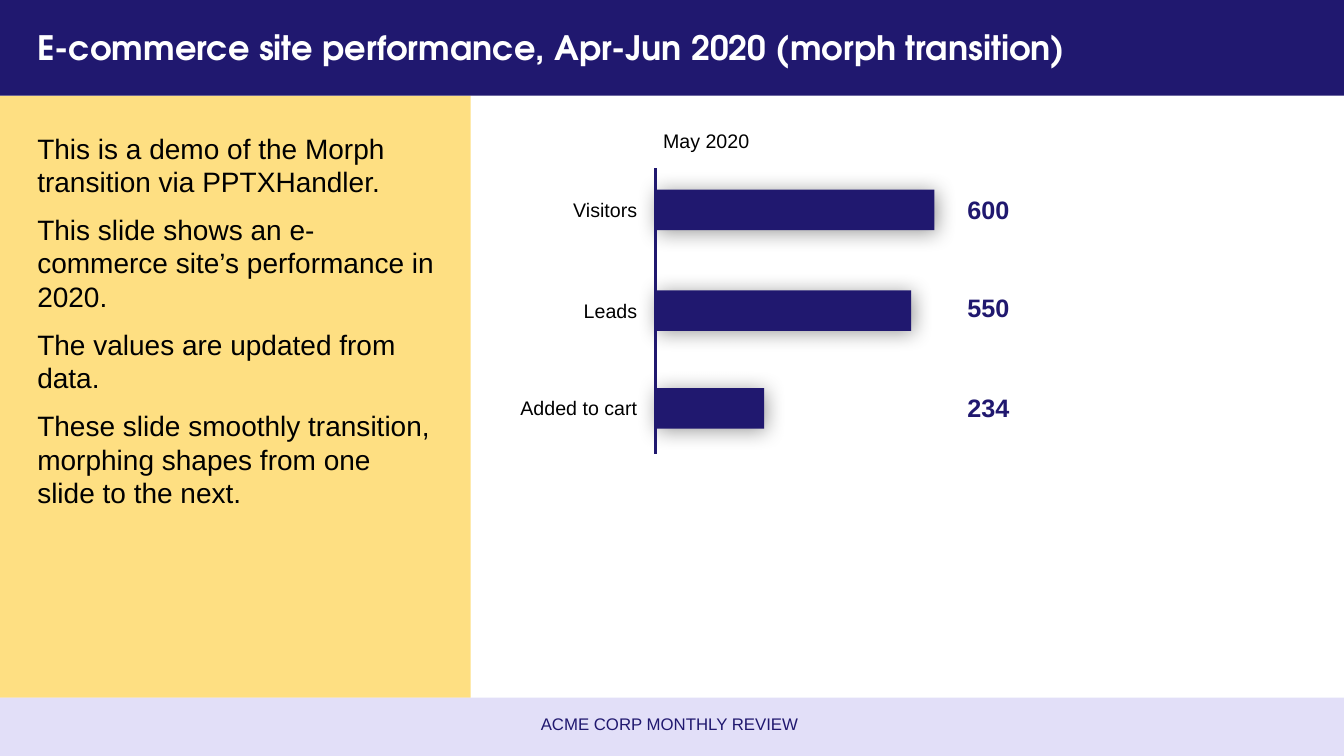
import pptx
import pptx.util
import pptx.dml.color
import pptx.enum.shapes
import pptx.enum.text
import pptx.oxml
import pptx.oxml.ns

Cm = pptx.util.Cm
Pt = pptx.util.Pt
ALIGN = pptx.enum.text.PP_ALIGN
ANCHOR = pptx.enum.text.MSO_ANCHOR
FIT = pptx.enum.text.MSO_AUTO_SIZE

TITLE = "E-commerce site performance, Apr-Jun 2020 (morph transition)"
NOTES = [
    "This is a demo of the Morph transition via PPTXHandler.",
    "This slide shows an e-commerce site’s performance in 2020.",
    "The values are updated from data.",
    "These slide smoothly transition, morphing shapes from one slide to the next.",
]
FOOTER = "ACME CORP MONTHLY REVIEW"
MONTH = "May 2020"
BARS = [
    ("Visitors", 600, 4.78, 4.78),
    ("Leads", 550, 7.32, 7.24),
    ("Added to cart", 234, 9.78, 9.75),
]
COLORS = {
    "navy": "20186F",
    "gold": "FEC107",
    "lilac": "C6C1F2",
    "white": "FFFFFF",
    "black": "000000",
}
WIDTH, HEIGHT = 33.87, 19.05
PANELS = [
    (0, 2.41, 11.86, 15.17, "gold", 50),
    (0, 17.58, WIDTH, HEIGHT - 17.58, "lilac", 50),
    (0, 0, WIDTH, 2.41, "navy", 100),
]
AXIS = 16.51
SCALE = 7.04 / 600
THICK = 1.02
SHADOW = (
    '<a:effectLst %s><a:outerShdw blurRad="%d" dist="%d" dir="2700000" '
    'algn="tl" rotWithShape="0"><a:srgbClr val="%s"><a:alpha val="40000"/>'
    "</a:srgbClr></a:outerShdw></a:effectLst>"
)


def tint(name):
    return pptx.dml.color.RGBColor.from_string(COLORS[name])


def add_rect(slide, left, top, width, height, color, alpha=100):
    kind = pptx.enum.shapes.MSO_SHAPE.RECTANGLE
    rect = slide.shapes.add_shape(kind, Cm(left), Cm(top), Cm(width), Cm(height))
    rect.shadow.inherit = False
    rect.line.fill.background()
    rect.fill.solid()
    rect.fill.fore_color.rgb = tint(color)
    if alpha < 100:
        tone = rect.fill._xPr.find(".//" + pptx.oxml.ns.qn("a:srgbClr"))
        mark = '<a:alpha %s val="%d"/>' % (pptx.oxml.ns.nsdecls("a"), alpha * 1000)
        tone.append(pptx.oxml.parse_xml(mark))
    return rect


def set_glow(shape):
    props = shape._element.spPr
    old = props.find(pptx.oxml.ns.qn("a:effectLst"))
    xml = SHADOW % (pptx.oxml.ns.nsdecls("a"), Pt(15), Pt(2), COLORS["black"])
    props.replace(old, pptx.oxml.parse_xml(xml))


def add_text(slide, left, top, width, height, lines, size, color="black",
             font="Arial", bold=False, align=ALIGN.LEFT, anchor=ANCHOR.TOP,
             gap=0, wrap=True, fit=FIT.NONE):
    box = slide.shapes.add_textbox(Cm(left), Cm(top), Cm(width), Cm(height))
    frame = box.text_frame
    frame.word_wrap = wrap
    frame.auto_size = fit
    frame.vertical_anchor = anchor
    for count, line in enumerate(lines):
        para = frame.add_paragraph() if count else frame.paragraphs[0]
        para.alignment = align
        para.space_before = Pt(gap)
        run = para.add_run()
        run.text = line
        run.font.name = font
        run.font.size = Pt(size)
        run.font.bold = bold
        run.font.color.rgb = tint(color)


def add_axis(slide):
    kind = pptx.enum.shapes.MSO_CONNECTOR.STRAIGHT
    axis = slide.shapes.add_connector(kind, Cm(AXIS), Cm(4.24), Cm(AXIS), Cm(11.43))
    axis.line.color.rgb = tint("navy")
    axis.line.width = Pt(2)
    blank = "<a:effectLst %s/>" % pptx.oxml.ns.nsdecls("a")
    axis._element.spPr.append(pptx.oxml.parse_xml(blank))


def main():
    """Build the monthly site performance slide."""
    deck = pptx.Presentation()
    deck.slide_width, deck.slide_height = Cm(WIDTH), Cm(HEIGHT)
    slide = deck.slides.add_slide(deck.slide_layouts[6])
    for panel in PANELS:
        add_rect(slide, *panel)
    add_text(slide, 0.69, 0.3, 32.51, 1.78, [TITLE], 24, "white",
             font="TeX Gyre Adventor", bold=True, anchor=ANCHOR.MIDDLE)
    add_text(slide, 0.69, 3.18, 10.54, 14.22, NOTES, 20, gap=10)
    add_text(slide, 5.18, 17.73, 23.39, 1.02, [FOOTER], 12, "navy",
             align=ALIGN.CENTER, anchor=ANCHOR.MIDDLE)
    add_text(slide, 16.46, 3.12, 5, 0.86, [MONTH], 14, fit=FIT.SHAPE_TO_FIT_TEXT)
    for label, value, top, level in BARS:
        set_glow(add_rect(slide, AXIS, top, value * SCALE, THICK, "navy"))
        add_text(slide, 12.5, top + 0.08, 3.81, 0.86, [label], 14,
                 align=ALIGN.RIGHT, fit=FIT.SHAPE_TO_FIT_TEXT)
        add_text(slide, 24.13, level, 1.8, THICK, [str(value)], 18, "navy",
                 bold=True, wrap=False, fit=FIT.SHAPE_TO_FIT_TEXT)
    add_axis(slide)
    deck.save("out.pptx")


if __name__ == "__main__":
    main()
